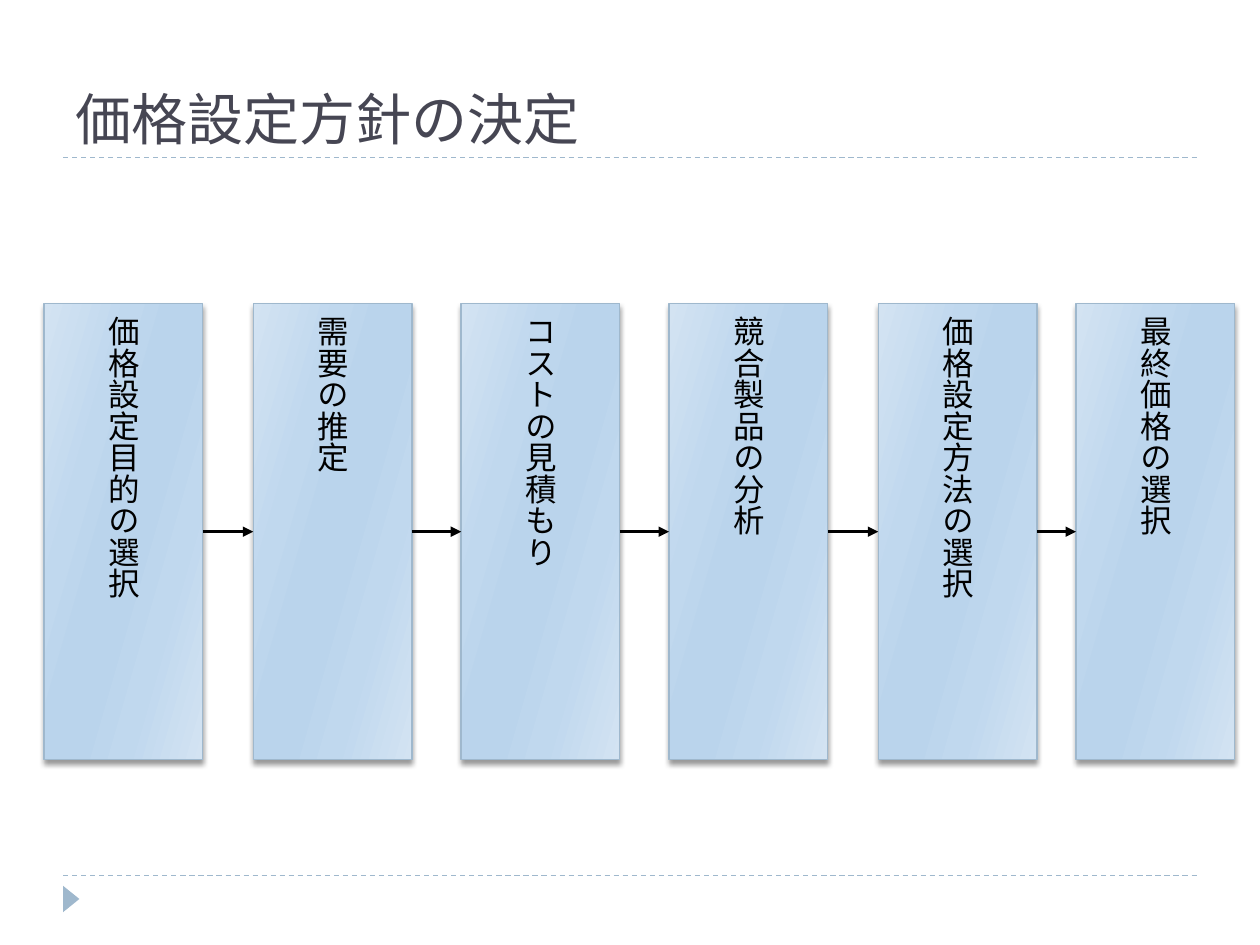
import pptx
import pptx.dml.color
import pptx.enum.dml
import pptx.enum.shapes
import pptx.enum.text
import pptx.oxml
import pptx.oxml.ns
import pptx.util
from pptx.util import Inches

ACCENT = "9FB8CD"
BLACK = "000000"
STEPS = ["価格設定目的の選択", "需要の推定", "コストの見積もり",
         "競合製品の分析", "価格設定方法の選択", "最終価格の選択"]
STEP_LEFTS = [0.35, 2.01, 3.66, 5.31, 6.97, 8.54]
STEP_WIDTH = 1.26
GRADIENT_STOPS = [(0, "D3E3F2"), (30, "C0D8EE"), (45, "BAD4EC"),
                  (55, "BAD4EC"), (73, "C0D8EE"), (100, "D3E3F2")]
GRADIENT_ANGLE = 16


def color(hex_string):
    return pptx.dml.color.RGBColor.from_string(hex_string)


def drawing_element(tag, content):
    """Parse a DrawingML element, given its tag with attributes and its content."""
    name = tag.split()[0]
    namespace = pptx.oxml.ns.nsdecls("a")
    return pptx.oxml.parse_xml(f"<a:{tag} {namespace}>{content}</a:{name}>")


def add_line(slide, left, top, right, bottom, line_color, width):
    connector = slide.shapes.add_connector(
        pptx.enum.shapes.MSO_CONNECTOR.STRAIGHT,
        Inches(left), Inches(top), Inches(right), Inches(bottom))
    connector.line.color.rgb = color(line_color)
    connector.line.width = pptx.util.Pt(width)
    connector._element.spPr.append(drawing_element("effectLst", ""))
    return connector


def add_text(shape, text, font_name, size, font_color):
    paragraph = shape.text_frame.paragraphs[0]
    paragraph.text = text
    paragraph.font.name = font_name
    paragraph.font.size = pptx.util.Pt(size)
    paragraph.font.color.rgb = color(font_color)
    return paragraph


def add_frame(slide, left, right, top, bottom):
    # Dashed rules below the title and above the footer
    for y in (top, bottom):
        rule = add_line(slide, left, y, right, y, ACCENT, 0.75)
        rule.line.dash_style = pptx.enum.dml.MSO_LINE.DASH

    # Footer marker pointing right
    marker = slide.shapes.add_shape(
        pptx.enum.shapes.MSO_SHAPE.ISOSCELES_TRIANGLE,
        Inches(left - 0.04), Inches(bottom + 0.12), Inches(0.21), Inches(0.13))
    marker.rotation = 90
    marker.shadow.inherit = False
    marker.fill.solid()
    marker.fill.fore_color.rgb = color(ACCENT)
    marker.line.fill.background()


def add_title(slide, text, left, top, width, height):
    title = slide.shapes.add_textbox(
        Inches(left), Inches(top), Inches(width), Inches(height))
    title.text_frame.word_wrap = True
    title.text_frame.vertical_anchor = pptx.enum.text.MSO_ANCHOR.BOTTOM
    add_text(title, text, "Roboto Slab", 32, "464653")


def add_step(slide, text, left, top, width, height):
    step = slide.shapes.add_shape(
        pptx.enum.shapes.MSO_SHAPE.RECTANGLE,
        Inches(left), Inches(top), Inches(width), Inches(height))
    step.line.color.rgb = color(ACCENT)
    step.line.width = pptx.util.Pt(0.75)

    # Gradient fill, placed right after the geometry
    stops = "".join(
        f'<a:gs pos="{position * 1000}"><a:srgbClr val="{stop_color}"/></a:gs>'
        for position, stop_color in GRADIENT_STOPS)
    properties = step._element.spPr
    properties.find(pptx.oxml.ns.qn("a:prstGeom")).addnext(drawing_element(
        "gradFill",
        f'<a:gsLst>{stops}</a:gsLst><a:lin ang="{GRADIENT_ANGLE * 60000}" scaled="0"/>'))

    # Soft shadow falling downwards
    blur, distance = pptx.util.Pt(3), pptx.util.Pt(2)
    properties.append(drawing_element(
        "effectLst",
        f'<a:outerShdw blurRad="{blur}" dist="{distance}" dir="5400000" rotWithShape="0">'
        f'<a:srgbClr val="{BLACK}"><a:alpha val="40000"/></a:srgbClr></a:outerShdw>'))

    # Vertical label
    frame = step.text_frame
    frame.word_wrap = False
    frame.vertical_anchor = pptx.enum.text.MSO_ANCHOR.MIDDLE
    frame._txBody.bodyPr.set("vert", "eaVert")
    paragraph = add_text(step, text, "Calibri", 18, BLACK)
    paragraph.alignment = pptx.enum.text.PP_ALIGN.CENTER


def add_process(slide, top, height):
    for text, left in zip(STEPS, STEP_LEFTS):
        add_step(slide, text, left, top, STEP_WIDTH, height)

    # Arrows across the gaps between neighbouring steps
    middle = top + height / 2
    for left, next_left in zip(STEP_LEFTS, STEP_LEFTS[1:]):
        arrow = add_line(slide, left + STEP_WIDTH, middle, next_left, middle, BLACK, 1.5)
        arrow.line._get_or_add_ln().append(drawing_element('tailEnd type="triangle"', ""))


def main():
    presentation = pptx.Presentation()
    presentation.slide_width = Inches(10)
    presentation.slide_height = Inches(7.5)
    slide = presentation.slides.add_slide(presentation.slide_layouts[6])
    add_frame(slide, 0.5, 9.5, 1.25, 6.95)
    add_title(slide, "価格設定方針の決定", 0.5, 0.17, 9, 1.08)
    add_process(slide, 2.41, 3.62)
    presentation.save("out.pptx")


if __name__ == "__main__":
    main()
